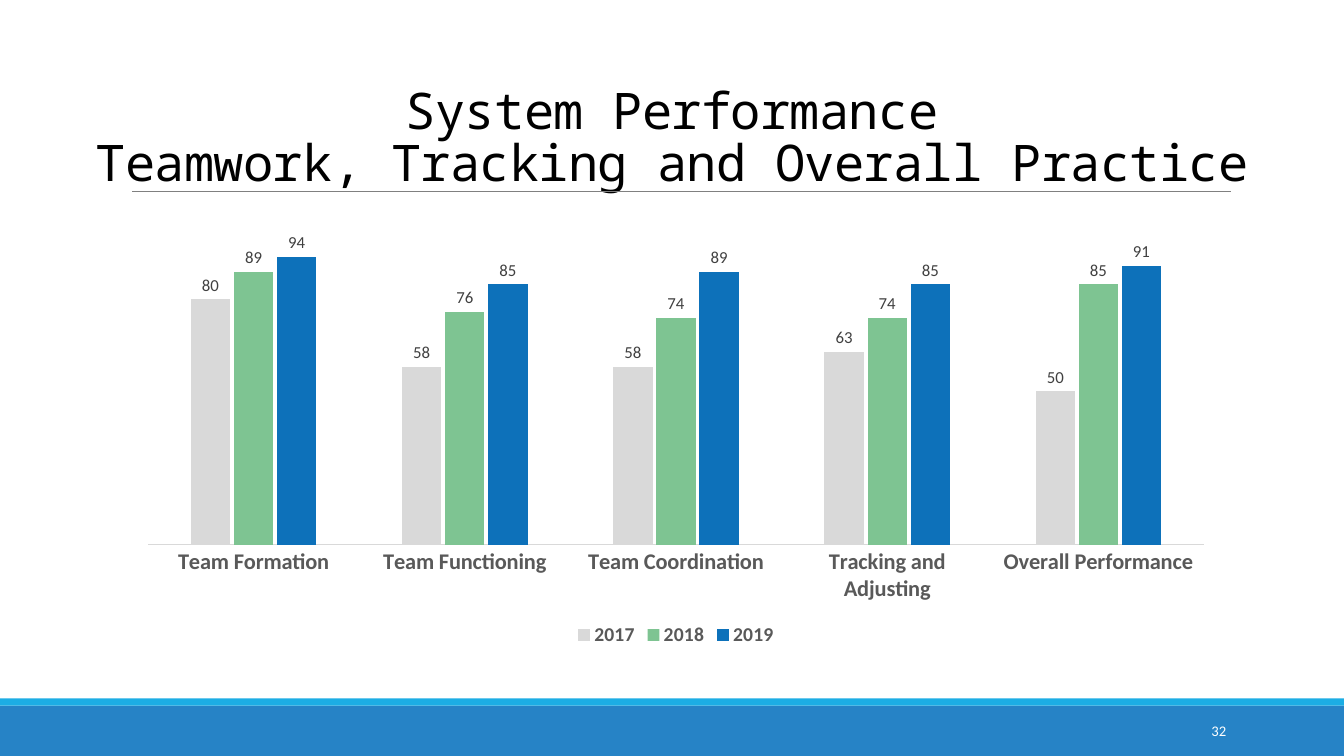
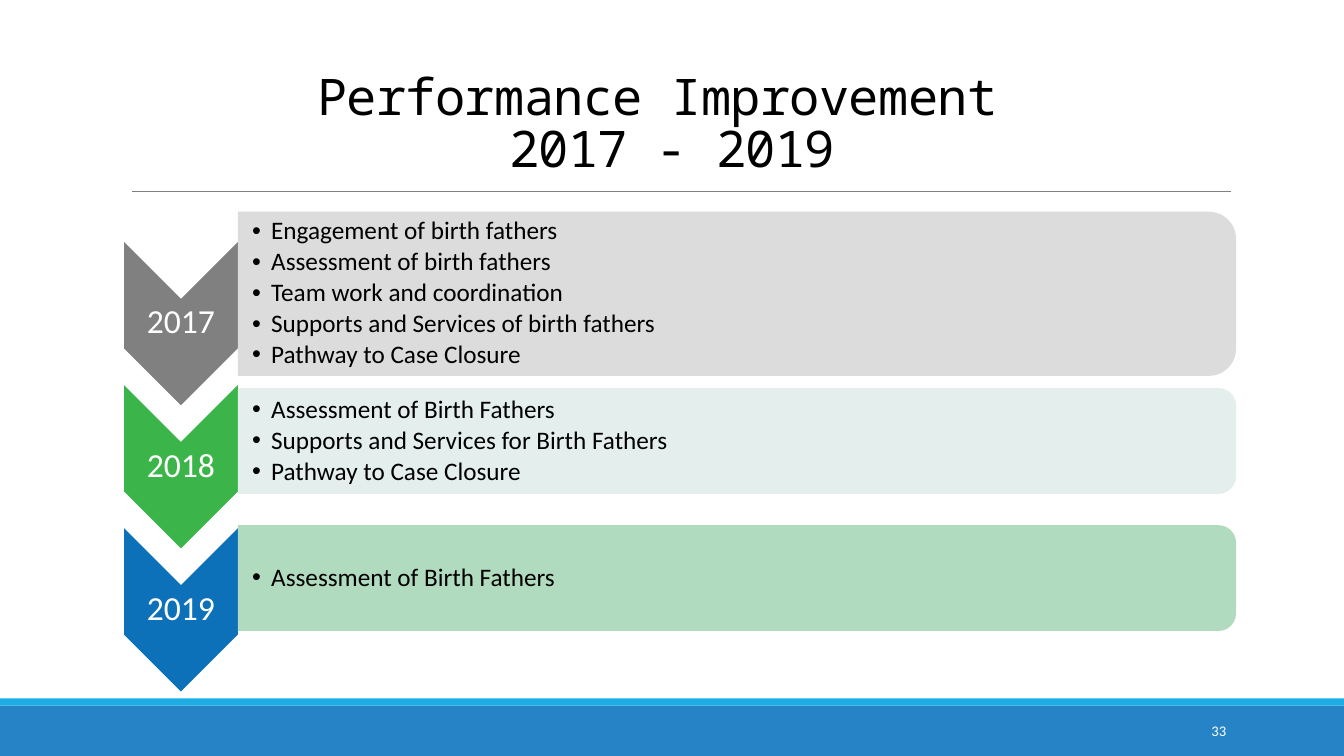
from dataclasses import dataclass

from lxml import etree
from pptx import Presentation
from pptx import util as u
from pptx.chart.data import CategoryChartData
from pptx.dml.color import RGBColor
from pptx.enum import chart as chart_enum
from pptx.enum import shapes, text
from pptx.oxml.ns import qn
from pptx.shapes.autoshape import Shape
from pptx.slide import Slide
from pptx.text.text import Font

SLIDE_WIDTH, SLIDE_HEIGHT = 13.33, 7.5
TITLE_FONT, BODY_FONT = "Noto Sans Mono", "Calibri"
BLACK, WHITE, GRAY, BLUE = "000000", "FFFFFF", "808080", "0D71BA"
LIGHT_GRAY, DARK_GRAY, LABEL_GRAY = "D9D9D9", "595959", "404040"

CHEVRON_LEFT, CHEVRON_TOP, CHEVRON_STEP = 1.23, 2.4, 1.42
CHEVRON_WIDTH, CHEVRON_HEIGHT = 1.13, 1.62
PANEL_LEFT, PANEL_WIDTH = 2.36, 9.9


@dataclass(frozen=True)
class Band:
    top: float
    height: float
    color: str


@dataclass(frozen=True)
class Series:
    name: str
    values: tuple[int, ...]
    color: str


@dataclass(frozen=True)
class YearRow:
    year: str
    color: str
    panel_color: str
    panel_top: float
    panel_height: float
    items: tuple[str, ...]


BANDS = (Band(7, 0.5, "2683C6"), Band(6.93, 0.07, "1CADE4"))

CATEGORIES = ("Team Formation", "Team Functioning", "Team Coordination",
              "Tracking and Adjusting", "Overall Performance")
SERIES = (
    Series("2017", (80, 58, 58, 63, 50), LIGHT_GRAY),
    Series("2018", (89, 76, 74, 74, 85), "7EC492"),
    Series("2019", (94, 85, 89, 85, 91), BLUE),
)

YEAR_ROWS = (
    YearRow("2017", GRAY, LIGHT_GRAY, 2.1, 1.63,
            ("Engagement of birth fathers", "Assessment of birth fathers",
             "Team work and coordination", "Supports and Services of birth fathers",
             "Pathway to Case Closure")),
    YearRow("2018", "3BB54A", "E0EDEC", 3.85, 1.05,
            ("Assessment of Birth Fathers", "Supports and Services for Birth Fathers",
             "Pathway to Case Closure")),
    YearRow("2019", BLUE, "A9D8B7", 5.21, 1.05, ("Assessment of Birth Fathers",)),
)


def rgb(color: str) -> RGBColor:
    return RGBColor.from_string(color)


def style_font(font: Font, size: float, color: str, name: str = BODY_FONT,
               bold: bool = False) -> None:
    font.name, font.size, font.bold = name, u.Pt(size), bold
    font.color.rgb = rgb(color)


def add_filled_shape(slide: Slide, kind: shapes.MSO_SHAPE, left: float, top: float,
                     width: float, height: float, color: str) -> Shape:
    shape = slide.shapes.add_shape(kind, u.Inches(left), u.Inches(top),
                                   u.Inches(width), u.Inches(height))
    shape.shadow.inherit = False
    shape.fill.solid()
    shape.fill.fore_color.rgb = rgb(color)
    shape.line.fill.background()
    return shape


def add_turned_shape(slide: Slide, kind: shapes.MSO_SHAPE, left: float, top: float,
                     width: float, height: float, color: str) -> Shape:
    """Place a shape turned by 90 degrees; the box given is the one it covers."""
    shift = (width - height) / 2
    shape = add_filled_shape(slide, kind, left + shift, top - shift, height, width, color)
    shape.rotation = 90
    return shape


def add_text(slide: Slide, lines: tuple[str, ...], left: float, top: float,
             width: float, height: float, size: float, color: str,
             align: text.PP_ALIGN, left_inset: float = 0.1,
             bulleted: bool = False) -> None:
    box = slide.shapes.add_textbox(u.Inches(left), u.Inches(top),
                                   u.Inches(width), u.Inches(height))
    frame = box.text_frame
    frame.word_wrap = True
    frame.vertical_anchor = text.MSO_ANCHOR.MIDDLE
    frame.margin_left = u.Inches(left_inset)
    frame.margin_top = frame.margin_bottom = u.Inches(0.01)
    frame.text = "\n".join(lines)
    for paragraph in frame.paragraphs:
        paragraph.alignment = align
        paragraph.line_spacing = 0.9
        if bulleted:
            paragraph.space_after = u.Pt(2.7)
            add_bullet(paragraph._p.get_or_add_pPr())
        style_font(paragraph.font, size, color)


def add_bullet(properties: etree.ElementBase) -> None:
    indent = u.Inches(0.19)
    properties.set("marL", str(indent))
    properties.set("indent", str(-indent))
    etree.SubElement(properties, qn("a:buFont")).set("typeface", "Arial")
    etree.SubElement(properties, qn("a:buChar")).set("char", "•")


def add_base_slide(presentation: Presentation, title: str, title_top: float,
                   title_height: float, number: int) -> Slide:
    """Add a slide with the shared bands, rule, title and page number."""
    slide = presentation.slides.add_slide(presentation.slide_layouts.get_by_name("Title Only"))
    for band in BANDS:
        add_filled_shape(slide, shapes.MSO_SHAPE.RECTANGLE, 0, band.top,
                         SLIDE_WIDTH, band.height, band.color)
    rule = slide.shapes.add_connector(shapes.MSO_CONNECTOR.STRAIGHT, u.Inches(1.31),
                                      u.Inches(1.9), u.Inches(12.21), u.Inches(1.9))
    rule.line.color.rgb = rgb(GRAY)
    rule.line.width = u.Pt(0.5)
    etree.SubElement(rule._element.spPr, qn("a:effectLst"))

    heading = slide.shapes.title
    heading.left, heading.top = u.Inches(0), u.Inches(title_top)
    heading.width, heading.height = u.Inches(SLIDE_WIDTH), u.Inches(title_height)
    frame = heading.text_frame
    frame.text = title
    frame.auto_size = text.MSO_AUTO_SIZE.NONE
    frame.vertical_anchor = text.MSO_ANCHOR.BOTTOM
    paragraph = frame.paragraphs[0]
    paragraph.alignment = text.PP_ALIGN.CENTER
    paragraph.line_spacing = 0.85
    style_font(paragraph.font, 36, BLACK, TITLE_FONT)
    paragraph._p.pPr.find(qn("a:defRPr")).set("spc", "-50")

    add_text(slide, (str(number),), 10.83, 7.06, 1.43, 0.4, 10.5, WHITE,
             text.PP_ALIGN.RIGHT)
    return slide


def add_performance_chart(slide: Slide) -> None:
    data = CategoryChartData()
    data.categories = CATEGORIES
    for series in SERIES:
        data.add_series(series.name, series.values)
    chart = slide.shapes.add_chart(chart_enum.XL_CHART_TYPE.COLUMN_CLUSTERED,
                                   u.Inches(1.25), u.Inches(2.28), u.Inches(10.91),
                                   u.Inches(4.18), data).chart
    style_font(chart.font, 10, BLACK)
    chart.has_title = False
    chart.has_legend = True
    chart.legend.position = chart_enum.XL_LEGEND_POSITION.BOTTOM
    chart.legend.include_in_layout = False
    style_font(chart.legend.font, 14, DARK_GRAY, bold=True)

    value_axis = chart.value_axis
    value_axis.minimum_scale, value_axis.maximum_scale = 0, 100
    value_axis.has_major_gridlines = False
    value_axis.visible = False
    category_axis = chart.category_axis
    category_axis.major_tick_mark = chart_enum.XL_TICK_MARK.NONE
    category_axis.format.line.color.rgb = rgb(LIGHT_GRAY)
    category_axis.format.line.width = u.Pt(0.75)
    style_font(category_axis.tick_labels.font, 16, DARK_GRAY, bold=True)

    plot = chart.plots[0]
    plot.gap_width, plot.overlap = 219, -10
    plot.vary_by_categories = False
    for series, columns in zip(SERIES, plot.series):
        columns.format.fill.solid()
        columns.format.fill.fore_color.rgb = rgb(series.color)
        labels = columns.data_labels
        labels.show_value = True
        labels.position = chart_enum.XL_LABEL_POSITION.OUTSIDE_END
        style_font(labels.font, 12, LABEL_GRAY)


def add_year_row(slide: Slide, row: YearRow, top: float) -> None:
    add_turned_shape(slide, shapes.MSO_SHAPE.CHEVRON, CHEVRON_LEFT, top,
                     CHEVRON_WIDTH, CHEVRON_HEIGHT, row.color)
    add_text(slide, (row.year,), CHEVRON_LEFT, top + 0.56, CHEVRON_WIDTH, 0.49, 24,
             WHITE, text.PP_ALIGN.CENTER)
    panel = add_turned_shape(slide, shapes.MSO_SHAPE.ROUND_2_SAME_RECTANGLE, PANEL_LEFT,
                             row.panel_top, PANEL_WIDTH, row.panel_height, row.panel_color)
    fill_color = panel._element.spPr.find(qn("a:solidFill"))[0]
    etree.SubElement(fill_color, qn("a:alpha")).set("val", "90000")
    add_text(slide, row.items, PANEL_LEFT, row.panel_top, PANEL_WIDTH, row.panel_height,
             18, BLACK, text.PP_ALIGN.LEFT, left_inset=0.14, bulleted=True)


def main() -> None:
    presentation = Presentation()
    presentation.slide_width = u.Inches(SLIDE_WIDTH)
    presentation.slide_height = u.Inches(SLIDE_HEIGHT)

    chart_slide = add_base_slide(
        presentation, "System Performance\vTeamwork, Tracking and Overall Practice",
        1.04, 0.91, 32)
    add_performance_chart(chart_slide)

    improvement_slide = add_base_slide(
        presentation, "Performance Improvement \v2017 - 2019", 1.02, 0.79, 33)
    for index, row in enumerate(YEAR_ROWS):
        add_year_row(improvement_slide, row, CHEVRON_TOP + index * CHEVRON_STEP)

    presentation.save("out.pptx")


if __name__ == "__main__":
    main()
